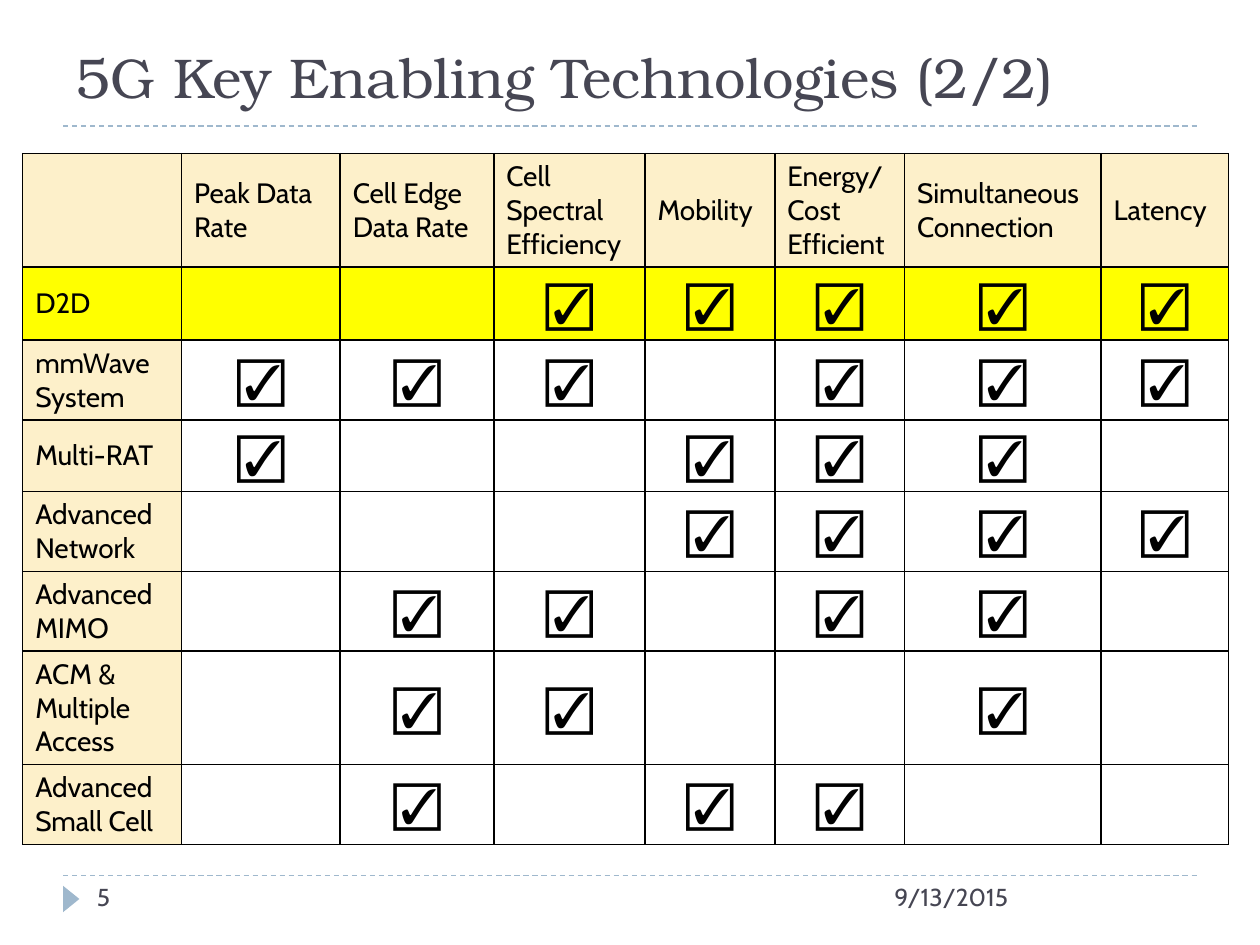
"""Build the 5G key enabling technologies slide."""
from lxml import etree
from pptx import Presentation
from pptx import util as u
from pptx.dml.color import RGBColor
from pptx.enum import dml, shapes, text
from pptx.oxml.ns import qn

COLORS = {"ink": "464653", "rule": "9FB8CD", "head": "FDF0CA",
          "highlight": "FFFF00", "black": "000000"}
HEADERS = ["", "Peak Data Rate", "Cell Edge Data Rate", "Cell Spectral Efficiency",
           "Mobility", "Energy/ Cost Efficient", "Simultaneous Connection", "Latency"]
CHECKS = {"D2D": (3, 4, 5, 6, 7),
          "mmWave System": (1, 2, 3, 5, 6, 7),
          "Multi-RAT": (1, 4, 5, 6),
          "Advanced Network": (4, 5, 6, 7),
          "Advanced MIMO": (2, 3, 5, 6),
          "ACM & Multiple Access": (2, 3, 6),
          "Advanced Small Cell": (2, 4, 5)}
COL_WIDTHS = [1.26, 1.26, 1.22, 1.2, 1.03, 1.03, 1.56, 1.01]
ROW_HEIGHTS = [0.83, 0.58, 0.58, 0.52, 0.58, 0.58, 0.83, 0.58]


def rgb(name):
    return RGBColor.from_string(COLORS[name])


class Deck:
    """Hold the style and the current slide."""

    body_font = "Cabin"
    title_font = "TeX Gyre Bonum"

    def __init__(self):
        self.prs = Presentation()
        self.prs.slide_width, self.prs.slide_height = u.Inches(10), u.Inches(7.5)
        self.s = self.prs.slides.add_slide(self.prs.slide_layouts[5])

    def box(self, x, y, w, h):
        return [u.Inches(v) for v in (x, y, w, h)]

    def set_text(self, tf, words, size, color="ink", font=None, align=text.PP_ALIGN.LEFT):
        p = tf.paragraphs[0]
        p.text, p.alignment = words, align
        p.font.size, p.font.name = u.Pt(size), font or self.body_font
        p.font.color.rgb = rgb(color)

    def title(self, words, *box):
        sp = self.s.shapes.title
        sp.left, sp.top, sp.width, sp.height = self.box(*box)
        sp.text_frame.vertical_anchor = text.MSO_ANCHOR.BOTTOM
        self.set_text(sp.text_frame, words, 32, font=self.title_font)

    def label(self, words, *box):
        tf = self.s.shapes.add_textbox(*self.box(*box)).text_frame
        tf.word_wrap = True
        self.set_text(tf, words, 14)

    def rule(self, y):
        ends = self.box(0.5, y, 9.5, y)
        c = self.s.shapes.add_connector(shapes.MSO_CONNECTOR.STRAIGHT, *ends)
        c.line.color.rgb, c.line.width = rgb("rule"), u.Pt(0.75)
        c.line.dash_style = dml.MSO_LINE.DASH
        etree.SubElement(c.element.spPr, qn("a:effectLst"))

    def marker(self, *box):
        sp = self.s.shapes.add_shape(shapes.MSO_SHAPE.ISOSCELES_TRIANGLE, *self.box(*box))
        sp.rotation, sp.shadow.inherit = 90, False
        sp.fill.solid()
        sp.fill.fore_color.rgb = rgb("rule")
        sp.line.fill.background()

    def border(self, cell):
        tcPr = cell._tc.get_or_add_tcPr()
        for i, side in enumerate(("lnL", "lnR", "lnT", "lnB")):
            ln = etree.Element(qn(f"a:{side}"), w=str(u.Pt(1)))
            fill = etree.SubElement(ln, qn("a:solidFill"))
            etree.SubElement(fill, qn("a:srgbClr"), val=COLORS["black"])
            tcPr.insert(i, ln)

    def cell(self, cell, words, fill):
        if fill:
            cell.fill.solid()
            cell.fill.fore_color.rgb = rgb(fill)
        else:
            cell.fill.background()
        self.border(cell)
        cell.vertical_anchor = text.MSO_ANCHOR.MIDDLE
        if words == "☑":
            self.set_text(cell.text_frame, words, 28, "black", align=text.PP_ALIGN.CENTER)
        elif words:
            self.set_text(cell.text_frame, words, 16, "black")

    def matrix(self, x, y):
        rows = [HEADERS] + [[name] + ["☑" if c in marks else "" for c in range(1, len(HEADERS))]
                            for name, marks in CHECKS.items()]
        size = self.box(x, y, sum(COL_WIDTHS), sum(ROW_HEIGHTS))
        table = self.s.shapes.add_table(len(rows), len(HEADERS), *size).table
        table.first_row = table.horz_banding = False
        for col, w in zip(table.columns, COL_WIDTHS):
            col.width = u.Inches(w)
        for row, h in zip(table.rows, ROW_HEIGHTS):
            row.height = u.Inches(h)
        for r, row in enumerate(rows):
            for c, words in enumerate(row):
                fill = "highlight" if r == 1 else "head" if r == 0 or c == 0 else None
                self.cell(table.cell(r, c), words, fill)


def main():
    deck = Deck()
    deck.rule(6.95)
    deck.rule(1)
    deck.marker(0.46, 7.07, 0.21, 0.13)
    deck.label("9/13/2015", 7, 6.95, 2.5, 0.4)
    deck.label("5", 0.67, 6.95, 2.17, 0.4)
    deck.title("5G Key Enabling Technologies (2/2)", 0.5, 0, 9, 0.92)
    deck.matrix(0.18, 1.22)
    deck.prs.save("out.pptx")


if __name__ == "__main__":
    main()
